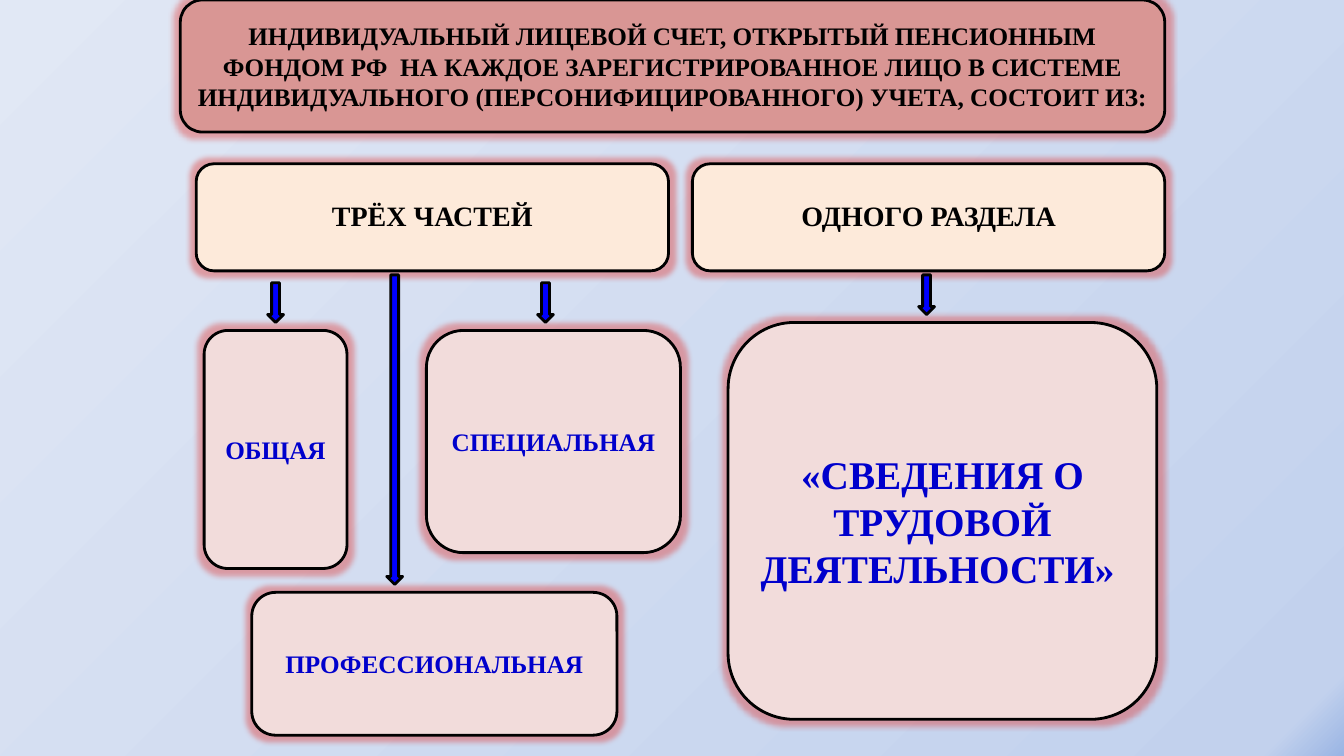
from pptx import Presentation
from pptx.dml.color import RGBColor
from pptx.enum.shapes import MSO_SHAPE as Shape
from pptx.enum.text import MSO_ANCHOR as Anchor, PP_ALIGN as Align
from pptx.oxml import parse_xml
from pptx.oxml.ns import nsdecls
from pptx.util import Inches, Mm, Pt

BLACK = RGBColor(0x00, 0x00, 0x00)
ROSE = RGBColor(0xD9, 0x96, 0x94)
CREAM = RGBColor(0xFD, 0xEA, 0xDA)
PINK = RGBColor(0xF2, 0xDC, 0xDB)
INK = RGBColor(0x00, 0x00, 0xCC)
BLUE = RGBColor(0x00, 0x00, 0xFF)
GLOW = RGBColor(0xE0, 0x32, 0x2D)
STOPS = [(0, RGBColor(0x9A, 0xB5, 0xE4)),
         (4, RGBColor(0xC2, 0xD1, 0xED)),
         (100, RGBColor(0xE1, 0xE8, 0xF5))]

FONT = "Times New Roman"
CELL = Mm(2)
LEFT, TOP = Inches(1.71), Inches(0.05)
HEAD = 16  # grid row where the title ends

TITLE = ("ИНДИВИДУАЛЬНЫЙ ЛИЦЕВОЙ СЧЕТ, ОТКРЫТЫЙ ПЕНСИОННЫМ ФОНДОМ РФ  НА КАЖДОЕ "
         "ЗАРЕГИСТРИРОВАННОЕ ЛИЦО В СИСТЕМЕ ИНДИВИДУАЛЬНОГО "
         "(ПЕРСОНИФИЦИРОВАННОГО) УЧЕТА, СОСТОИТ ИЗ:")
# text, column, row, columns wide, rows high
GROUPS = [("ТРЁХ ЧАСТЕЙ", 3, 20, 59.5, 13.5),
          ("ОДНОГО РАЗДЕЛА", 65.5, 20, 59.5, 13.5)]
# text, column, row, columns wide, rows high, text size
PARTS = [("ОБЩАЯ", 4, 41, 18, 30, 18),
         ("СПЕЦИАЛЬНАЯ", 32, 41, 32, 28, 18),
         ("ПРОФЕССИОНАЛЬНАЯ", 10, 74, 46, 18, 18),
         ("«СВЕДЕНИЯ О ТРУДОВОЙ ДЕЯТЕЛЬНОСТИ» ", 70, 40, 54, 50, 28)]
# column, row, rows long
ARROWS = [(12, 35, 5), (27, 34, 39), (46, 35, 5), (94, 34, 5)]


def paint(slide):
    """Fill the background with a gradient that spreads from the lower right."""
    stops = "".join(f'<a:gs pos="{at * 1000}"><a:srgbClr val="{color}"/></a:gs>'
                    for at, color in STOPS)
    slide.element.cSld.insert(0, parse_xml(
        f'<p:bg {nsdecls("p", "a")}><p:bgPr><a:gradFill><a:gsLst>{stops}</a:gsLst>'
        '<a:path path="circle"><a:fillToRect l="100000" t="100000"/></a:path>'
        '</a:gradFill><a:effectLst/></p:bgPr></p:bg>'))


def block(slide, kind, fill, col, row, cols, rows):
    """Add an outlined shape at a place on the grid."""
    shape = slide.shapes.add_shape(
        kind, LEFT + int(col * CELL), TOP + int(row * CELL),
        int(cols * CELL), int(rows * CELL))
    shape.shadow.inherit = False
    shape.fill.solid()
    shape.fill.fore_color.rgb = fill
    shape.line.color.rgb = BLACK
    shape.line.width = Pt(2)
    return shape


def glow(shape):
    effects = shape._element.spPr.find(
        "{http://schemas.openxmlformats.org/drawingml/2006/main}effectLst")
    effects.append(parse_xml(
        f'<a:glow {nsdecls("a")} rad="{Pt(8)}"><a:srgbClr val="{GLOW}">'
        '<a:alpha val="40000"/></a:srgbClr></a:glow>'))


def box(slide, text, place, fill, color, size):
    """Add a glowing rounded box with bold centred text."""
    shape = block(slide, Shape.ROUNDED_RECTANGLE, fill, *place)
    glow(shape)
    frame = shape.text_frame
    frame.word_wrap = True
    frame.vertical_anchor = Anchor.MIDDLE
    para = frame.paragraphs[0]
    para.alignment = Align.CENTER
    run = para.add_run()
    run.text = text
    run.font.name = FONT
    run.font.size = Pt(size)
    run.font.bold = True
    run.font.color.rgb = color
    return frame


def main():
    deck = Presentation()
    deck.slide_width, deck.slide_height = Inches(13.33), Inches(7.5)
    slide = deck.slides.add_slide(deck.slide_layouts[6])
    paint(slide)

    rise = TOP / CELL  # the title reaches the slide's top edge
    box(slide, TITLE, (1, -rise, 124, HEAD + rise), ROSE, BLACK, 18)
    for text, *place in GROUPS:
        frame = box(slide, text, place, CREAM, BLACK, 20)
        frame.vertical_anchor = Anchor.BOTTOM
        frame.margin_bottom = Inches(0.33)
    for text, *place, size in PARTS:
        box(slide, text, place, PINK, INK, size)
    for col, row, rows in ARROWS:
        block(slide, Shape.DOWN_ARROW, BLUE, col, row, 2, rows)

    deck.save("out.pptx")


if __name__ == "__main__":
    main()
